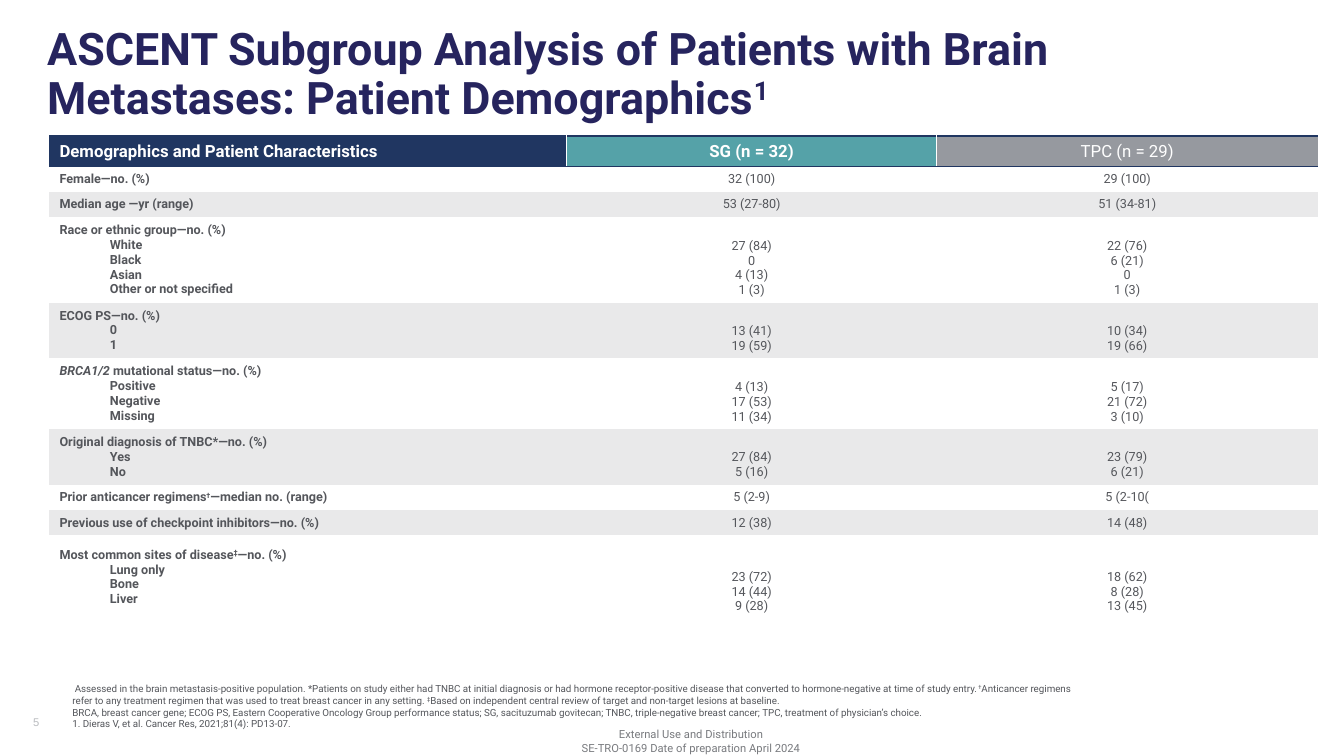
from lxml import etree
from pptx import Presentation
from pptx import util as u
from pptx.dml import color
from pptx.enum import text
from pptx.oxml import ns

NAVY, TEAL, GREY, WHITE, BAND, INK = "203661", "55A2A8", "96999F", "FFFFFF", "E9E9EA", "54565B"
LEFT, CENTER = text.PP_ALIGN.LEFT, text.PP_ALIGN.CENTER
TOP, MIDDLE, BOTTOM = text.MSO_ANCHOR.TOP, text.MSO_ANCHOR.MIDDLE, text.MSO_ANCHOR.BOTTOM
PLAIN_STYLE = "{2D5ABB26-0587-4C30-8999-92F81FD0307C}"

TITLE = "ASCENT Subgroup Analysis of Patients with Brain Metastases: Patient Demographics|^1"
HEADINGS = [
    ("Demographics and Patient Characteristics", NAVY, LEFT, True),
    ("SG (n = 32)", TEAL, CENTER, True),
    ("TPC (n = 29)", GREY, CENTER, False),
]
CHARACTERISTICS = [
    (["Female—no. (%)"], ["32 (100)"], ["29 (100)"]),
    (["Median age —yr (range)"], ["53 (27‑80)"], ["51 (34‑81)"]),
    (["Race or ethnic group—no. (%)", "White", "Black", "Asian", "Other or not specified"],
     ["27 (84)", "0", "4 (13)", "1 (3)"], ["22 (76)", "6 (21)", "0", "1 (3)"]),
    (["ECOG PS—no. (%)", "0", "1"], ["13 (41)", "19 (59)"], ["10 (34)", "19 (66)"]),
    (["~BRCA1/2| mutational status—no. (%)", "Positive", "Negative", "Missing"],
     ["4 (13)", "17 (53)", "11 (34)"], ["5 (17)", "21 (72)", "3 (10)"]),
    (["Original diagnosis of TNBC*—no. (%)", "Yes", "No"],
     ["27 (84)", "5 (16)"], ["23 (79)", "6 (21)"]),
    (["Prior anticancer regimens|^†|—median no. (range)"], ["5 (2-9)"], ["5 (2-10("]),
    (["Previous use of checkpoint inhibitors—no. (%)"], ["12 (38)"], ["14 (48)"]),
    (["Most common sites of disease|^‡|—no. (%)", "Lung only", "Bone", "Liver"],
     ["23 (72)", "14 (44)", "9 (28)"], ["18 (62)", "8 (28)", "13 (45)"]),
]
ROW_HEIGHTS = [0.3, 0.25, 0.25, 0.83, 0.54, 0.69, 0.54, 0.25, 0.25, 0.83]
COLUMN_WIDTHS = [5.13, 3.67, 3.78]
FOOTNOTES = [
    " Assessed in the brain metastasis‑positive population. *Patients on study either had TNBC at "
    "initial diagnosis or had hormone receptor‑positive disease that converted to hormone‑negative "
    "at time of study entry.|^ †|Anticancer regimens refer to any treatment regimen that was used "
    "to treat breast cancer in any setting. |^‡|Based on independent central review of target and "
    "non‑target lesions at baseline.",
    "BRCA, breast cancer gene; ECOG PS, Eastern Cooperative Oncology Group performance status; SG, "
    "sacituzumab govitecan; TNBC, triple‑negative breast cancer; TPC, treatment of physician’s choice.",
    "1. Dieras V, et al. Cancer Res, 2021;81(4): PD13-07.",
]
FOOTER = ["External Use and Distribution", "SE-TRO-0169 Date of preparation April 2024"]


def rgb(hex_string):
    """Turn a hex string into a colour."""
    return color.RGBColor.from_string(hex_string)


def write(frame, lines, size, ink, align=LEFT, bold=False, name="Roboto", spacing=None, indent=0):
    """Fill a frame; | parts the runs, ^ marks a superscript and ~ an italic run."""
    for number, line in enumerate(lines):
        paragraph = frame.paragraphs[0] if number == 0 else frame.add_paragraph()
        paragraph.alignment, paragraph.line_spacing = align, spacing
        if indent and number:
            paragraph._p.get_or_add_pPr().set("marL", str(u.Inches(indent)))
        for piece in line.split("|"):
            run = paragraph.add_run()
            run.text = piece.lstrip("^~")
            formats = {"size": u.Pt(size), "name": name, "bold": bold,
                       "italic": piece.startswith("~")}
            for key, value in formats.items():
                setattr(run.font, key, value)
            run.font.color.rgb = rgb(ink)
            if piece.startswith("^"):
                run._r.get_or_add_rPr().set("baseline", "30000")


def text_region(slide, box, lines, size, ink, anchor, **formats):
    """Place a wrapped block of text in the given box."""
    frame = slide.shapes.add_textbox(*map(u.Inches, box)).text_frame
    frame.word_wrap, frame.vertical_anchor = True, anchor
    write(frame, lines, size, ink, **formats)


def add_border(cell, side, ink, points):
    """Draw one border of a cell."""
    line = etree.SubElement(cell._tc.get_or_add_tcPr(), ns.qn(f"a:ln{side}"), w=str(u.Pt(points)))
    fill = etree.SubElement(line, ns.qn("a:solidFill"))
    etree.SubElement(fill, ns.qn("a:srgbClr"), val=ink)


def paint(cell, fill, anchor):
    """Give a cell its fill and anchor."""
    cell.fill.solid()
    cell.fill.fore_color.rgb = rgb(fill)
    cell.vertical_anchor = anchor


def demographics_table(slide, left, top):
    """Place the table of patient characteristics from its top left corner."""
    frame = slide.shapes.add_table(
        len(ROW_HEIGHTS), len(COLUMN_WIDTHS),
        *map(u.Inches, (left, top, sum(COLUMN_WIDTHS), sum(ROW_HEIGHTS))))
    table = frame.table
    table.first_row = table.horz_banding = False
    table._tbl.tblPr.find(ns.qn("a:tableStyleId")).text = PLAIN_STYLE
    for column, width in zip(table.columns, COLUMN_WIDTHS):
        column.width = u.Inches(width)
    for row, height in zip(table.rows, ROW_HEIGHTS):
        row.height = u.Inches(height)

    last = len(HEADINGS) - 1
    for index, (heading, fill, align, bold) in enumerate(HEADINGS):
        cell = table.cell(0, index)
        if index > 0:
            add_border(cell, "L", WHITE, 0.75)
        if index < last:
            add_border(cell, "R", WHITE, 0.75)
        for side in "TB":
            add_border(cell, side, NAVY, 1)
        paint(cell, fill, MIDDLE)
        write(cell.text_frame, [heading], 12, WHITE, align, bold)

    for row, (labels, *arms) in enumerate(CHARACTERISTICS, 1):
        fill = WHITE if row % 2 else BAND
        label_cell = table.cell(row, 0)
        paint(label_cell, fill, MIDDLE)
        write(label_cell.text_frame, labels, 9, INK, bold=True, indent=0.5)
        for column, values in enumerate(arms, 1):
            value_cell = table.cell(row, column)
            paint(value_cell, fill, BOTTOM)
            write(value_cell.text_frame, values, 9, INK, CENTER)


def demographics_slide(deck):
    """Build the patient demographics slide."""
    slide = deck.slides.add_slide(deck.slide_layouts[6])
    text_region(slide, (5.14, 7.19, 3.43, 0.32), FOOTER, 8, "787A7E", MIDDLE, align=CENTER)
    text_region(slide, (0.23, 7, 3, 0.32), ["5"], 8, "B9BBBF", MIDDLE, name="Arial")
    text_region(slide, (0.37, 0.22, 12.56, 1), [TITLE], 32, "26245E", TOP, bold=True, spacing=0.9)
    text_region(slide, (0.62, 6.52, 10.27, 0.77), FOOTNOTES, 7, INK, BOTTOM)
    demographics_table(slide, 0.49, 1.35)


def main():
    """Make the deck and save it."""
    deck = Presentation()
    deck.slide_width, deck.slide_height = u.Inches(13.33), u.Inches(7.5)
    demographics_slide(deck)
    deck.save("out.pptx")


if __name__ == "__main__":
    main()
